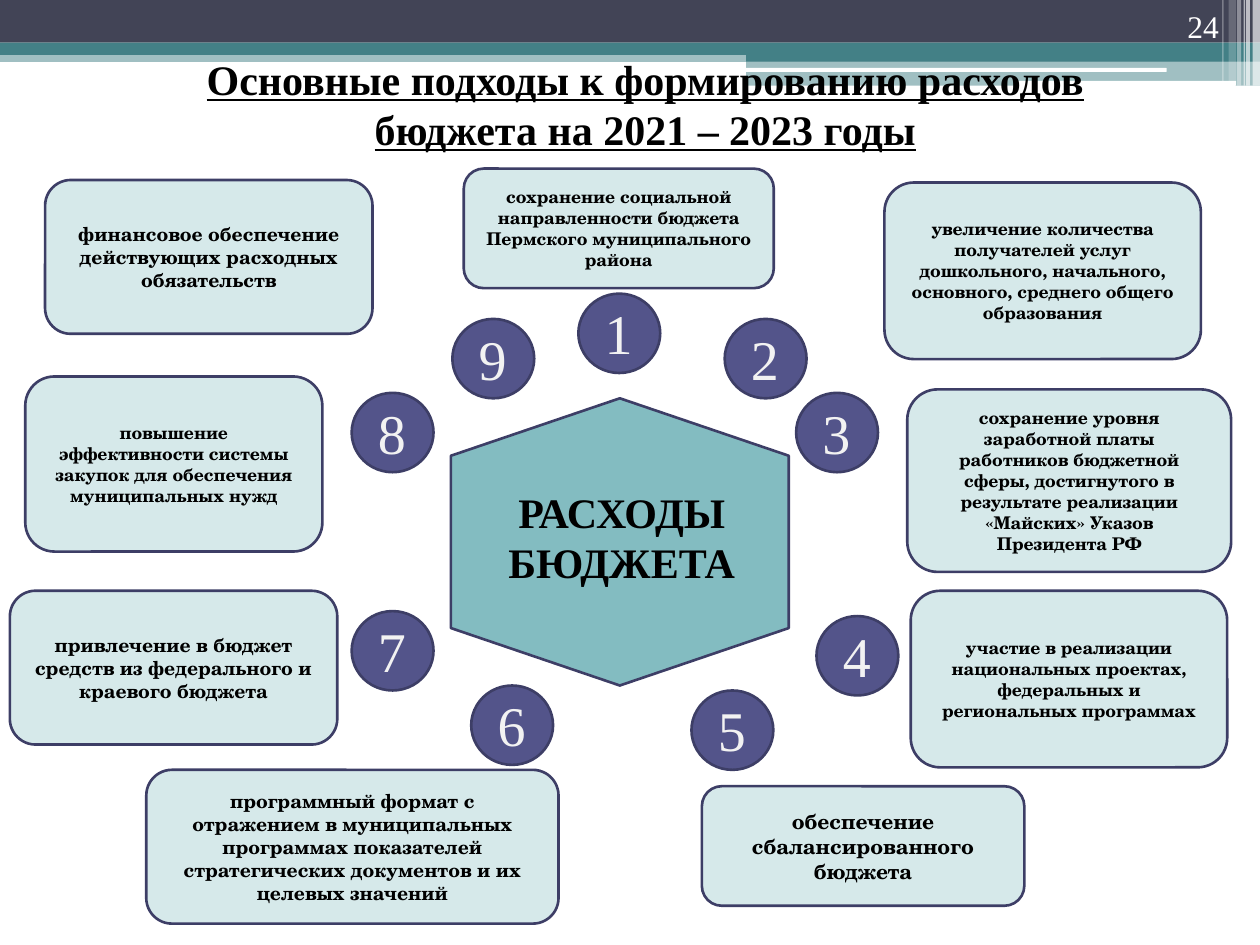
from lxml import etree
from pptx import Presentation
from pptx.dml.color import RGBColor
from pptx.enum.shapes import MSO_SHAPE as Shape
from pptx.enum.text import MSO_ANCHOR as Anchor, PP_ALIGN as Align
from pptx.oxml.ns import qn
from pptx.util import Cm, Pt

SERIF = "Times New Roman"
SCHOOL = "TeX Gyre Schola"

BLACK = RGBColor(0x00, 0x00, 0x00)
WHITE = RGBColor(0xFF, 0xFF, 0xFF)
PALE_GREY = RGBColor(0xF2, 0xF2, 0xF2)
SLATE = RGBColor(0x42, 0x44, 0x56)
TEAL = RGBColor(0x43, 0x80, 0x86)
LIGHT_TEAL = RGBColor(0x83, 0xBC, 0xC1)
PALE_TEAL = RGBColor(0xD6, 0xE9, 0xEA)
VIOLET = RGBColor(0x53, 0x54, 0x8A)
OUTLINE = RGBColor(0x3D, 0x3E, 0x66)

BANDS = [
    (Shape.RECTANGLE, (0, 1.02, 25.4, 0.23), TEAL, 50),
    (Shape.RECTANGLE, (0, 0, 25.4, 0.86), SLATE, 100),
    (Shape.RECTANGLE, (0, 0.86, 25.4, 0.25), TEAL, 100),
    (Shape.RECTANGLE, (15.04, 0.99, 10.36, 0.25), TEAL, 100),
    (Shape.RECTANGLE, (15.04, 1.22, 10.36, 0.51), TEAL, 50),
    (Shape.ROUNDED_RECTANGLE, (15.01, 1.37, 8.51, 0.08), WHITE, 100),
    (Shape.ROUNDED_RECTANGLE, (20.47, 1.63, 4.45, 0.1), WHITE, 100),
]

STRIPES = [
    (25.25, 0.15, 1.73, 65),
    (25.12, 0.08, 1.73, 65),
    (25.07, 0.03, 1.73, 60),
    (24.94, 0.08, 1.73, 40),
    (24.77, 0.15, 1.63, 20),
    (24.64, 0.03, 1.63, 30),
]

APPROACHES = [
    ("сохранение социальной направленности бюджета Пермского муниципального района",
     10, (9.35, 3.4, 6.25, 2.41), (11.66, 5.92)),
    ("увеличение количества получателей услуг дошкольного, начального, "
     "основного, среднего общего образования",
     10, (17.83, 3.68, 6.38, 3.56), (14.61, 6.43)),
    ("сохранение уровня заработной платы работников бюджетной сферы, "
     "достигнутого в результате реализации «Майских» Указов Президента РФ",
     10, (18.29, 7.85, 6.53, 3.68), (16.05, 7.92)),
    ("участие в реализации национальных проектах, федеральных и региональных программах",
     10, (18.36, 11.91, 6.38, 3.56), (16.46, 12.42)),
    ("обеспечение сбалансированного бюджета",
     12, (14.15, 15.85, 6.5, 2.41), (13.94, 13.92)),
    ("программный формат с отражением в муниципальных программах показателей "
     "стратегических документов и их целевых значений",
     11, (2.95, 15.52, 8.31, 3.1), (9.5, 13.82)),
    ("привлечение в бюджет средств из федерального и краевого бюджета",
     11, (0.2, 11.91, 6.6, 3.1), (7.09, 12.32)),
    ("повышение эффективности системы закупок для обеспечения муниципальных нужд",
     10, (0.51, 7.59, 5.99, 3.53), (7.09, 7.92)),
    ("финансовое обеспечение действующих расходных обязательств",
     11, (0.91, 3.63, 6.6, 3.1), (9.12, 6.43)),
]


def lengths(box):
    return [Cm(value) for value in box]


def write(frame, lines, size, color, align, anchor=Anchor.TOP, face=SERIF,
          bold=False, underline=False):
    frame.word_wrap = True
    frame.vertical_anchor = anchor
    paragraph = frame.paragraphs[0]
    paragraph.alignment = align
    for index, line in enumerate(lines):
        if index:
            paragraph.add_line_break()
        run = paragraph.add_run()
        run.text = line
        font = run.font
        font.name = face
        font.size = Pt(size)
        font.bold = bold
        font.underline = underline
        font.color.rgb = color


def add_figure(slide, preset, box, fill, outlined=True):
    figure = slide.shapes.add_shape(preset, *lengths(box))
    figure.shadow.inherit = False
    figure.fill.solid()
    figure.fill.fore_color.rgb = fill
    if outlined:
        figure.line.color.rgb = OUTLINE
        figure.line.width = Pt(1.5)
    else:
        figure.line.fill.background()
    return figure


def add_band(slide, preset, box, fill, opacity):
    band = add_figure(slide, preset, box, fill, outlined=False)
    if opacity < 100:
        color = band.element.spPr.find(qn("a:solidFill"))[0]
        etree.SubElement(color, qn("a:alpha")).set("val", str(opacity * 1000))


def add_label(slide, box, lines, size, color, align, **style):
    label = slide.shapes.add_textbox(*lengths(box))
    write(label.text_frame, lines, size, color, align, **style)


def add_header(slide):
    for band in BANDS:
        add_band(slide, *band)
    for left, width, height, opacity in STRIPES:
        add_band(slide, Shape.RECTANGLE, (left, 0, width, height), WHITE, opacity)
    add_label(slide, (22.71, 0, 2.11, 1.02), ["24"], 18, WHITE, Align.RIGHT,
              anchor=Anchor.BOTTOM)


def set_title(slide):
    title = slide.shapes.title
    title.left, title.top, title.width, title.height = lengths((3.05, 0.51, 19.91, 3.15))
    write(title.text_frame,
          ["Основные подходы к формированию расходов бюджета на 2021 – 2023 годы"],
          24, BLACK, Align.CENTER, anchor=Anchor.MIDDLE, bold=True, underline=True)
    title.element.getparent().append(title.element)


def add_center(slide):
    hexagon = add_figure(slide, Shape.FLOWCHART_PREPARATION,
                         (9.6, 7.52, 5.79, 6.81), LIGHT_TEAL)
    hexagon.rotation = 90
    add_label(slide, (9.98, 9.68, 5.11, 2.31), ["РАСХОДЫ", "БЮДЖЕТА"], 24, BLACK,
              Align.CENTER, bold=True)


def add_approach(slide, number, text, size, card_box, circle_corner):
    card = add_figure(slide, Shape.ROUNDED_RECTANGLE, card_box, PALE_TEAL)
    write(card.text_frame, [text], size, BLACK, Align.CENTER, anchor=Anchor.MIDDLE,
          face=SCHOOL, bold=True)
    left, top = circle_corner
    add_figure(slide, Shape.OVAL, (left, top, 1.65, 1.6), VIOLET)
    add_label(slide, (left + 0.28, top - 0.02, 1.07, 1.63), [str(number)], 32,
              PALE_GREY, Align.LEFT)


def main():
    deck = Presentation()
    deck.slide_width, deck.slide_height = Cm(25.4), Cm(19.05)
    slide = deck.slides.add_slide(deck.slide_layouts[5])
    add_header(slide)
    set_title(slide)
    add_center(slide)
    for number, approach in enumerate(APPROACHES, start=1):
        add_approach(slide, number, *approach)
    deck.save("out.pptx")


if __name__ == "__main__":
    main()
